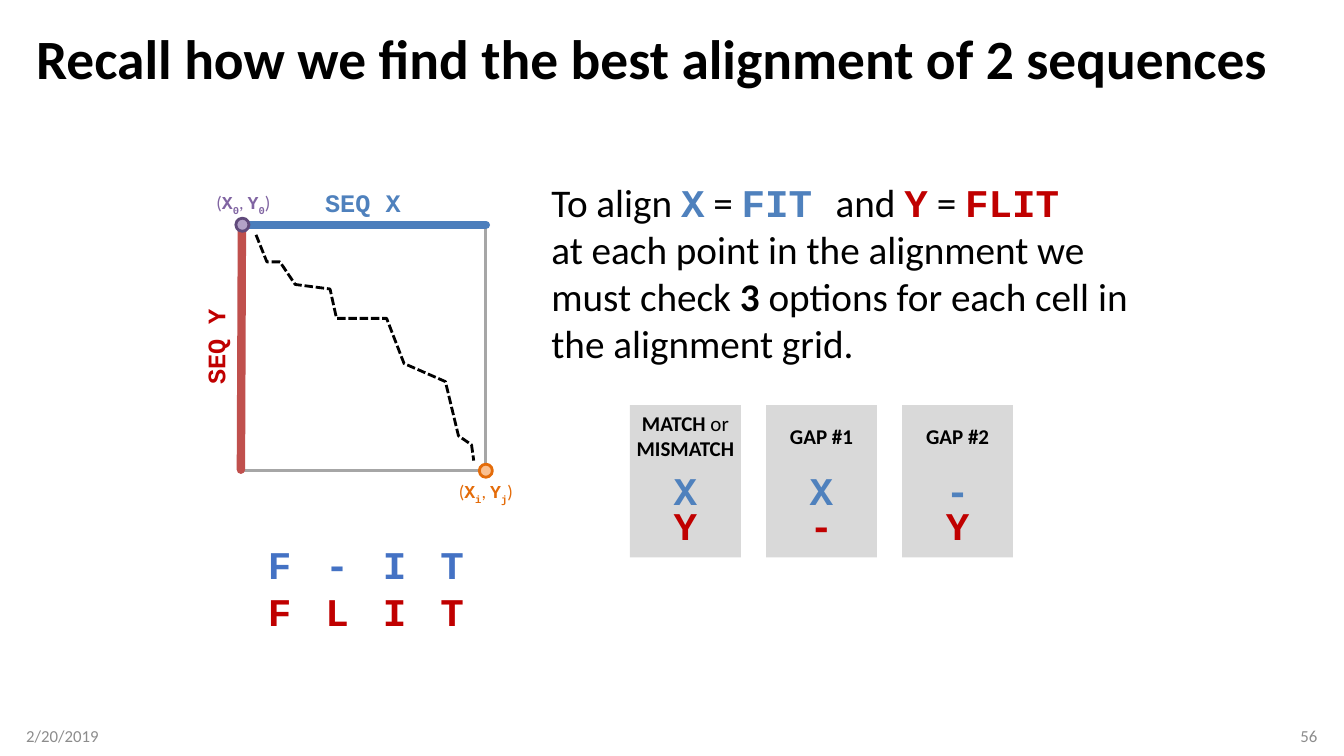
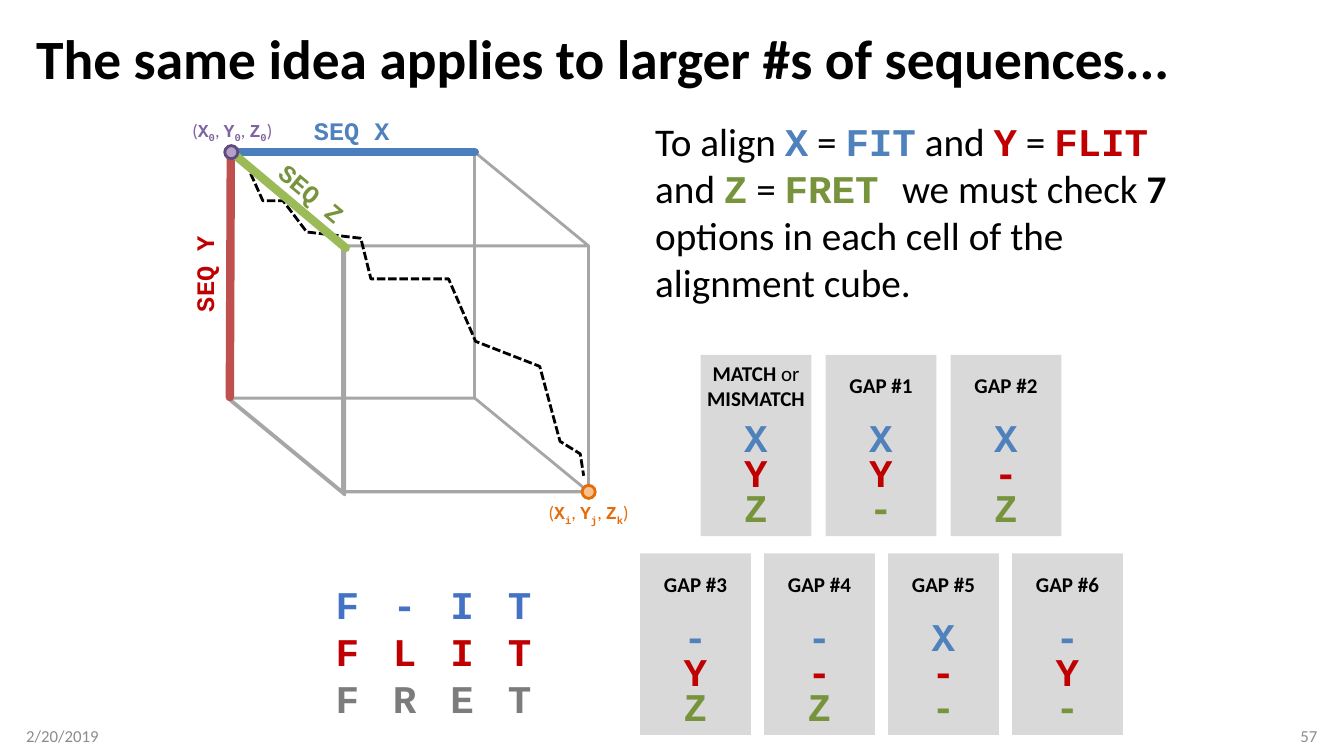
from dataclasses import dataclass
from typing import NamedTuple

from lxml import etree
from pptx import Presentation
from pptx.dml.color import RGBColor
from pptx.enum.dml import MSO_LINE
from pptx.enum.shapes import MSO_CONNECTOR, MSO_SHAPE
from pptx.enum.text import MSO_ANCHOR, PP_ALIGN
from pptx.oxml.ns import qn
from pptx.util import Inches, Pt

LEFT, CENTER, RIGHT = PP_ALIGN.LEFT, PP_ALIGN.CENTER, PP_ALIGN.RIGHT
TOP, MIDDLE = MSO_ANCHOR.TOP, MSO_ANCHOR.MIDDLE
RECTANGLE, OVAL = MSO_SHAPE.RECTANGLE, MSO_SHAPE.OVAL
STRAIGHT, DASHED = MSO_CONNECTOR.STRAIGHT, MSO_LINE.SQUARE_DOT

# Grid: every length counts cells of a tenth of an inch
COLUMNS, ROWS, CELLS_PER_INCH = 133.33, 75, 10
SANS, MONO = "Calibri", "Courier New"
BLACK, WHITE, EDGE, CARD, FOOTER = "000000", "FFFFFF", "A6A6A6", "D9D9D9", "8C8C8C"
START, END = "8064A2", "E46C0A"
LETTER_COLORS = {"X": "4F81BD", "Y": "C00000", "Z": "77933C"}
ROW_COLORS = ("4472C4", "C00000", "7C7C7C")
SIDE, DOT = 24.4, 1.3
CARD_WIDTH, HEADING_HEIGHT = 11, 6.1
INSETS = (1, 0.5, 1, 0.5)
NO_INSETS = (0, 0, 0, 0)
# Alignment trail, as shares of its width and height
TRAIL = ((0, 0), (0.05, 0.12), (0.11, 0.12), (0.18, 0.22), (0.34, 0.24), (0.37, 0.37),
         (0.6, 0.37), (0.68, 0.57), (0.87, 0.65), (0.93, 0.89), (0.99, 0.93), (1, 1))


@dataclass(frozen=True)
class Span:
    text: str
    color: str = BLACK
    font: str = SANS
    bold: bool = False
    baseline: int = 0


class Axis(NamedTuple):
    letter: str
    start: tuple
    end: tuple
    color: str
    label_center: tuple
    rotation: int


class Diagram(NamedTuple):
    origin: tuple
    depth: tuple
    trail_start: tuple
    trail_size: tuple
    letters: str


class CardRow(NamedTuple):
    left: float
    top: float
    pitch: float
    first_gap: int
    symbols: tuple


# Offsets are counted from the origin of the diagram
AXES = (
    Axis("X", (0.2, 0), (24.4, 0), "4B7EBC", (12.2, -2.2), 0),
    Axis("Y", (0.2, 0), (0.1, 24.3), "C0504D", (-2.45, 12.1), 270),
    Axis("Z", (0.4, 0.1), (11.6, 9.5), "9BBB59", (8.25, 4.1), 40),
)


def cells(count: float) -> int:
    return Inches(count / CELLS_PER_INCH)


def rgb(code: str) -> RGBColor:
    return RGBColor.from_string(code)


def shift(point: tuple, offset: tuple) -> tuple:
    return point[0] + offset[0], point[1] + offset[1]


def centered(center: tuple, width: float, height: float) -> tuple:
    return center[0] - width / 2, center[1] - height / 2, width, height


# Text
def mono(text: str, color: str, baseline: int = 0) -> Span:
    return Span(text, color, MONO, True, baseline)


def equation(letter: str, word: str) -> list:
    color = LETTER_COLORS[letter]
    return [mono(letter, color), Span(" = "), mono(word, color)]


def write_paragraphs(frame, paras: list, size: float, align, spacing=None) -> None:
    for index, spans in enumerate(paras):
        para = frame.add_paragraph() if index else frame.paragraphs[0]
        para.alignment = align
        para.line_spacing = spacing
        for span in spans:
            run = para.add_run()
            run.text = span.text
            values = {"name": span.font, "size": Pt(size), "bold": span.bold}
            for name, value in values.items():
                setattr(run.font, name, value)
            run.font.color.rgb = rgb(span.color)
            if span.baseline:
                run._r.get_or_add_rPr().set("baseline", str(span.baseline * 1000))


def fill_box(box, paras: list, size: float, align=LEFT, anchor=TOP,
             insets: tuple = INSETS, wrap: bool = True, spacing=None) -> None:
    sides = ("margin_left", "margin_top", "margin_right", "margin_bottom")
    values = dict(zip(sides, map(cells, insets)))
    values.update(word_wrap=wrap, vertical_anchor=anchor)
    for name, value in values.items():
        setattr(box.text_frame, name, value)
    write_paragraphs(box.text_frame, paras, size, align, spacing)


def add_text(shapes, place: tuple, paras: list, size: float, **values) -> None:
    fill_box(shapes.add_textbox(*map(cells, place)), paras, size, **values)


# Shapes
def set_look(shape, fill: str = "", line: str = "") -> None:
    shape.shadow.inherit = False
    if fill:
        shape.fill.solid()
        shape.fill.fore_color.rgb = rgb(fill)
    else:
        shape.fill.background()
    if line:
        shape.line.color.rgb = rgb(line)
        shape.line.width = Pt(2)
    else:
        shape.line.fill.background()


def add_shape(shapes, kind, place: tuple, fill: str = "", line: str = ""):
    shape = shapes.add_shape(kind, *map(cells, place))
    set_look(shape, fill, line)
    return shape


def add_outline(shapes, points: list, color: str, close: bool):
    corners = [tuple(map(cells, point)) for point in points]
    builder = shapes.build_freeform(*corners[0])
    builder.add_line_segments(corners[1:], close=close)
    outline = builder.convert_to_shape()
    set_look(outline, line=color)
    return outline


def add_axis_line(shapes, start: tuple, end: tuple, color: str) -> None:
    line = shapes.add_connector(STRAIGHT, *map(cells, start + end))
    line.line.color.rgb = rgb(color)
    line.line.width = Pt(6)
    properties = line._element.spPr
    properties.find(qn("a:ln")).set("cap", "rnd")
    etree.SubElement(properties, qn("a:effectLst"))


def add_label(shapes, place: tuple, spans: list, size: float, rotation: int = 0) -> None:
    label = add_shape(shapes, RECTANGLE, place, WHITE)
    color = label._element.spPr.find(qn("a:solidFill"))[0]
    etree.SubElement(color, qn("a:alpha")).set("val", "50000")
    label.rotation = rotation
    fill_box(label, [spans], size, align=CENTER, insets=NO_INSETS, wrap=False)


# Square or cube with its axes and the alignment trail
def add_end_point(shapes, center: tuple, label_center: tuple, letters: str,
                  subscripts: str, color: str, fill: str, line: str) -> None:
    add_shape(shapes, OVAL, centered(center, DOT, DOT), fill, line)
    spans = [Span("(", color)]
    for index, (letter, subscript) in enumerate(zip(letters, subscripts)):
        if index:
            spans.append(Span(", ", color))
        spans += [mono(letter, color), mono(subscript, color, -25)]
    spans.append(Span(")", color))
    add_label(shapes, centered(label_center, 2.8 * len(letters), 2.2), spans, 13)


def add_diagram(page, diagram: Diagram) -> None:
    shapes = page.shapes.add_group_shape().shapes
    origin, depth = diagram.origin, diagram.depth
    front = shift(origin, depth)
    add_shape(shapes, RECTANGLE, (*origin, SIDE, SIDE), line=EDGE)
    if any(depth):
        # Top, bottom and left faces join the back square to the front one
        faces = ((origin, (SIDE, 0)), (shift(origin, (0, SIDE)), (SIDE, 0)),
                 (shift(origin, (0.2, 0.3)), (0, SIDE)))
        for corner, along in faces:
            near = shift(corner, depth)
            add_outline(shapes, [corner, shift(corner, along), shift(near, along), near],
                        EDGE, True)
        add_shape(shapes, RECTANGLE, (*front, SIDE, SIDE), line=EDGE)

    axes = AXES[:len(diagram.letters)]
    for axis in axes:
        place = centered(shift(origin, axis.label_center), 7.5, 3)
        add_label(shapes, place, [mono(f"SEQ {axis.letter}", LETTER_COLORS[axis.letter])],
                  18, axis.rotation)
    width, height = diagram.trail_size
    trail = [shift(diagram.trail_start, (x * width, y * height)) for x, y in TRAIL]
    add_outline(shapes, trail, BLACK, False).line.dash_style = DASHED
    for axis in axes:
        add_axis_line(shapes, shift(origin, axis.start), shift(origin, axis.end), axis.color)

    far = shift(front, (SIDE, SIDE))
    add_end_point(shapes, shift(origin, (0.25, 0)), shift(origin, (0.35, -2.2)),
                  diagram.letters, "000", START, "B3A2C7", "604A7B")
    add_end_point(shapes, far, shift(far, (0, 2.05)),
                  diagram.letters, "ijk", END, "FAC090", "E46C0A")


# Option cards
def add_cards(page, row: CardRow, height: float) -> None:
    for index, symbols in enumerate(row.symbols):
        shapes = page.shapes.add_group_shape().shapes
        left = row.left + index * row.pitch
        center = left + CARD_WIDTH / 2
        add_shape(shapes, RECTANGLE, (left, row.top, CARD_WIDTH, height), CARD)
        gap = row.first_gap + index
        heading = [[Span(f"GAP #{gap}", bold=True)]] if gap else [
            [Span("MATCH", bold=True), Span(" or")], [Span("MISMATCH", bold=True)]]
        add_text(shapes, (center - 6, row.top, 12, HEADING_HEIGHT), heading, 15,
                 align=CENTER, anchor=MIDDLE)
        stack = 1.9 + 3.2 * len(symbols)
        letters = [[mono(symbol, color)]
                   for symbol, color in zip(symbols, LETTER_COLORS.values())]
        add_text(shapes, (center - 2.2, row.top + height - stack, 4.4, stack), letters, 28,
                 align=CENTER, wrap=False, spacing=Pt(25))


# Aligned sequences
def add_alignment(page, left: float, top: float, sequences: tuple) -> None:
    columns, rows = len(sequences[0]), len(sequences)
    place = (left, top, 5.7 * columns, 4.67 * rows)
    table = page.shapes.add_table(rows, columns, *map(cells, place)).table
    table.first_row = table.horz_banding = False
    values = dict.fromkeys(("margin_left", "margin_top", "margin_right", "margin_bottom"), 0)
    values["vertical_anchor"] = MIDDLE
    for row, (sequence, color) in enumerate(zip(sequences, ROW_COLORS)):
        for column, letter in enumerate(sequence):
            cell = table.cell(row, column)
            cell.fill.background()
            for name, value in values.items():
                setattr(cell, name, value)
            write_paragraphs(cell.text_frame, [[mono(letter, color)]], 28, CENTER)


def add_page(deck, title: str, number: int):
    page = deck.slides.add_slide(deck.slide_layouts[6])
    add_text(page.shapes, (2.6, 2.5, 128.1, 7.2), [[Span(title, bold=True)]], 39.6,
             anchor=MIDDLE, spacing=0.9)
    add_text(page.shapes, (2.6, 71, 30, 4), [[Span("2/20/2019", FOOTER)]], 12,
             anchor=MIDDLE, insets=(0, 0.5, 1, 0.5))
    add_text(page.shapes, (100.7, 71, 30, 4), [[Span(str(number), FOOTER)]], 12,
             align=RIGHT, anchor=MIDDLE, insets=(1, 0.5, 0, 0.5))
    return page


def main() -> None:
    deck = Presentation()
    deck.slide_width, deck.slide_height = cells(COLUMNS), cells(ROWS)

    # Two sequences: a square
    page = add_page(deck, "Recall how we find the best alignment of 2 sequences", 56)
    add_diagram(page, Diagram((23.8, 22.3), (0, 0), (25.4, 23.3), (21.6, 22.4), "XY"))
    add_alignment(page, 24.9, 54.1, ("F-IT", "FLIT"))
    add_text(page.shapes, (54.7, 17.7, 57.2, 18.8), [
        [Span("To align "), *equation("X", "FIT "), Span("and "), *equation("Y", "FLIT")],
        [Span("at each point in the alignment we must check "), Span("3", bold=True),
         Span(" options for each cell in the alignment grid.")]], 28, insets=NO_INSETS)
    add_cards(page, CardRow(62.5, 40.2, 13.5, 0, ("XY", "X-", "-Y")), 15.1)

    # Three sequences: a cube
    page = add_page(deck, "The same idea applies to larger #s of sequences...", 57)
    add_text(page.shapes, (65, 11.6, 50.8, 18.8), [
        [Span("To align "), *equation("X", "FIT"), Span(" and "), *equation("Y", "FLIT"),
         Span(" and "), *equation("Z", "FRET "), Span("we must check "),
         Span("7", bold=True), Span(" options in each cell of the alignment cube.")]],
             28, insets=NO_INSETS)
    add_diagram(page, Diagram((22.7, 15.1), (11.3, 9.3), (24.4, 16.2), (33.5, 31), "XYZ"))
    add_alignment(page, 31.6, 58.1, ("F-IT", "FLIT", "FRET"))
    for row in (CardRow(69.5, 35.2, 12.4, 0, ("XYZ", "XY-", "X-Z")),
                CardRow(63.5, 54.9, 12.3, 3, ("-YZ", "--Z", "X--", "-Y-"))):
        add_cards(page, row, 18)
    deck.save("out.pptx")


if __name__ == "__main__":
    main()
